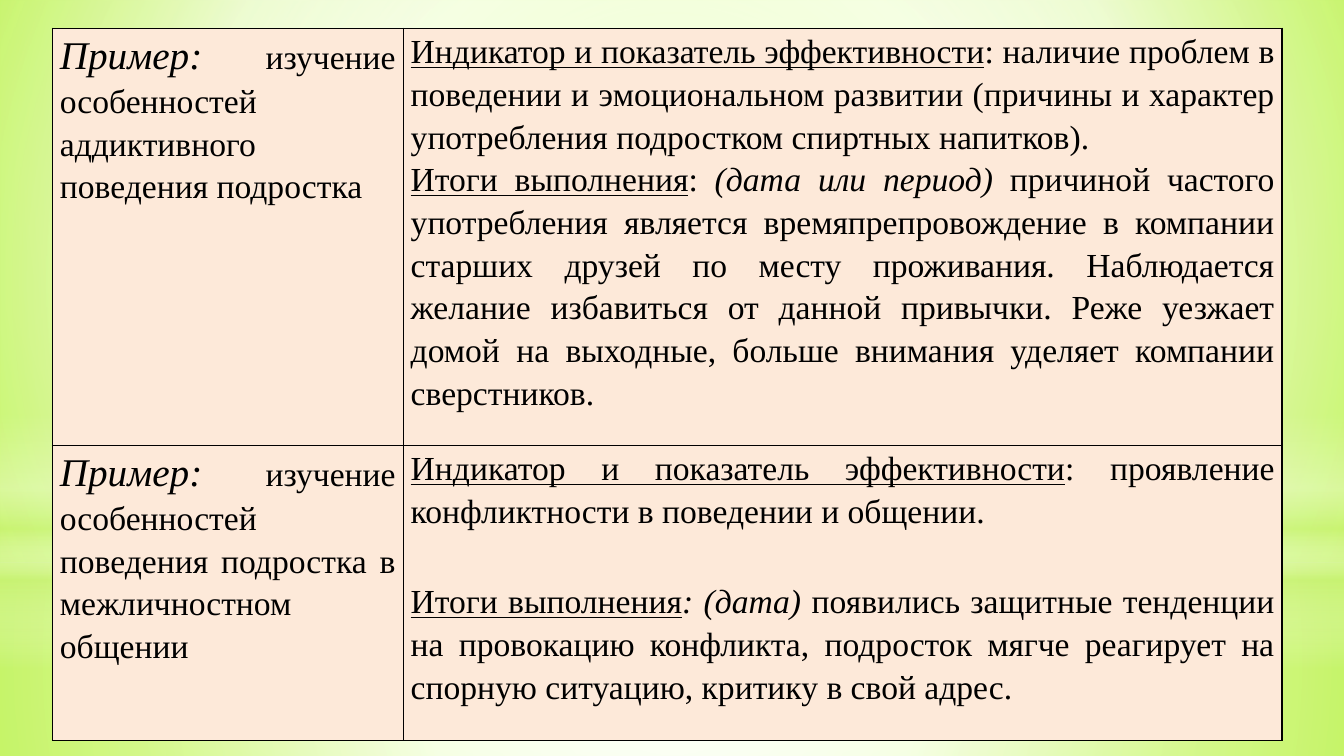
from lxml import etree
from pptx import Presentation
from pptx.dml.color import RGBColor
from pptx.enum.shapes import MSO_SHAPE as Preset
from pptx.enum.text import PP_ALIGN as Align
from pptx.oxml.ns import qn
from pptx.util import Cm, Pt

BLACK = RGBColor(0x00, 0x00, 0x00)
WHITE = RGBColor(0xFF, 0xFF, 0xFF)
PEACH = RGBColor(0xFD, 0xE9, 0xD9)
LIME = RGBColor(0xCA, 0xF2, 0x78)
LIME_CENTRE = RGBColor(0xCA, 0xFF, 0x60)
PALE_LIME = RGBColor(0xF7, 0xFF, 0xE7)
LIME_EDGE = RGBColor(0xB7, 0xFF, 0x29)

FONT = "Times New Roman"
WIDTH, HEIGHT = Cm(33.87), Cm(19.05)
HORIZON = Cm(14.17)
CENTRE = (50, 50, 50, 50)

# Run styles: size, italic, underline
LEAD = (28, True, False)
PLAIN = (24, False, False)
ITALIC = (24, True, False)
HEADING = (24, False, True)

INDICATOR = ("Индикатор и показатель эффективности", HEADING)
RESULTS = ("Итоги выполнения", HEADING)

# Each row: example paragraphs, outcome paragraphs, space before the results
ROWS = [
    (
        [[("Пример: ", LEAD),
          ("изучение особенностей аддиктивного поведения подростка", PLAIN)]],
        [[INDICATOR,
          (": наличие проблем в поведении и эмоциональном развитии (причины и "
           "характер употребления подростком спиртных напитков).", PLAIN)],
         [RESULTS, (": ", PLAIN), ("(дата или период) ", ITALIC),
          ("причиной частого употребления является времяпрепровождение в "
           "компании старших друзей по месту проживания. Наблюдается желание "
           "избавиться от данной привычки. Реже уезжает домой на выходные, "
           "больше внимания уделяет компании сверстников.", PLAIN)]],
        0,
    ),
    (
        [[("Пример: ", LEAD),
          ("изучение особенностей поведения подростка в межличностном общении",
           PLAIN)]],
        [[INDICATOR,
          (": проявление конфликтности в поведении и общении.", PLAIN)],
         [RESULTS, (": (дата) ", ITALIC),
          ("появились защитные тенденции на провокацию конфликта, подросток "
           "мягче реагирует на спорную ситуацию, критику в свой адрес.",
           PLAIN)]],
        34,
    ),
]


def paint_gradient(fill, element, stops, focus=None):
    """Stops are (position, colour, opacity) in percent; no focus means vertical."""
    fill.gradient()
    gradient = element.find(".//" + qn("a:gradFill"))
    for child in list(gradient):
        gradient.remove(child)
    stop_list = etree.SubElement(gradient, qn("a:gsLst"))
    for position, colour, opacity in stops:
        stop = etree.SubElement(stop_list, qn("a:gs"), pos=str(position * 1000))
        shade = etree.SubElement(stop, qn("a:srgbClr"), val=str(colour))
        if opacity < 100:
            etree.SubElement(shade, qn("a:alpha"), val=str(opacity * 1000))
    if focus:
        circle = etree.SubElement(gradient, qn("a:path"), {"path": "circle"})
        edges = {side: str(value * 1000) for side, value in zip("ltrb", focus)}
        etree.SubElement(circle, qn("a:fillToRect"), edges)
    else:
        etree.SubElement(gradient, qn("a:lin"), ang="5400000", scaled="0")


def add_glow(slide, preset, top, height, stops, focus=None):
    glow = slide.shapes.add_shape(preset, 0, top, WIDTH, height)
    glow.shadow.inherit = False
    glow.line.fill.background()
    paint_gradient(glow.fill, glow.element, stops, focus)


def add_backdrop(slide):
    paint_gradient(
        slide.background.fill, slide.element,
        [(0, LIME_CENTRE, 100), (60, PALE_LIME, 100), (100, LIME_EDGE, 100)],
        (20, 10, 20, 60))
    add_glow(slide, Preset.RECTANGLE, HORIZON, HEIGHT - HORIZON,
             [(0, WHITE, 91), (37, WHITE, 76), (100, LIME, 79)], CENTRE)
    add_glow(slide, Preset.RECTANGLE, 0, HORIZON,
             [(0, WHITE, 89), (48, WHITE, 62), (100, LIME, 79)], CENTRE)
    add_glow(slide, Preset.RECTANGLE, Cm(10.46), Cm(6.35),
             [(0, WHITE, 0), (29, WHITE, 30), (45, LIME, 40),
              (55, WHITE, 26), (65, LIME, 60), (100, WHITE, 0)])
    add_glow(slide, Preset.OVAL, Cm(4.44), HORIZON,
             [(0, WHITE, 100), (56, WHITE, 0)], CENTRE)


def add_borders(cell):
    properties = cell._tc.get_or_add_tcPr()
    for index, side in enumerate(("lnL", "lnR", "lnT", "lnB")):
        border = etree.Element(qn("a:" + side), w=str(Pt(1)))
        solid = etree.SubElement(border, qn("a:solidFill"))
        etree.SubElement(solid, qn("a:srgbClr"), val=str(BLACK))
        properties.insert(index, border)


def fill_cell(cell, paragraphs, gap=0):
    cell.fill.solid()
    cell.fill.fore_color.rgb = PEACH
    cell.margin_left = cell.margin_right = Cm(0.19)
    cell.margin_top = cell.margin_bottom = 0
    add_borders(cell)
    frame = cell.text_frame
    for index, runs in enumerate(paragraphs):
        para = frame.add_paragraph() if index else frame.paragraphs[0]
        para.alignment = Align.JUSTIFY
        para.line_spacing = 1.15
        para.space_before = Pt(gap if index else 0)
        para.font.name = FONT
        para.font.color.rgb = BLACK
        for text, (size, italic, underline) in runs:
            span = para.add_run()
            span.text = text
            span.font.name = FONT
            span.font.color.rgb = BLACK
            span.font.size = Pt(size)
            span.font.italic = italic
            span.font.underline = underline


def add_examples_table(slide):
    widths, heights = (Cm(8.84), Cm(22.15)), (Cm(10.51), Cm(7.44))
    table = slide.shapes.add_table(
        len(ROWS), 2, Cm(1.32), Cm(0.71), sum(widths), sum(heights)).table
    table.first_row = table.horz_banding = False
    for column, width in zip(table.columns, widths):
        column.width = width
    for row, height, (example, outcome, gap) in zip(table.rows, heights, ROWS):
        row.height = height
        fill_cell(row.cells[0], example)
        fill_cell(row.cells[1], outcome, gap)


def main():
    deck = Presentation()
    deck.slide_width, deck.slide_height = WIDTH, HEIGHT
    slide = deck.slides.add_slide(deck.slide_layouts[6])
    add_backdrop(slide)
    add_examples_table(slide)
    deck.save("out.pptx")


if __name__ == "__main__":
    main()
